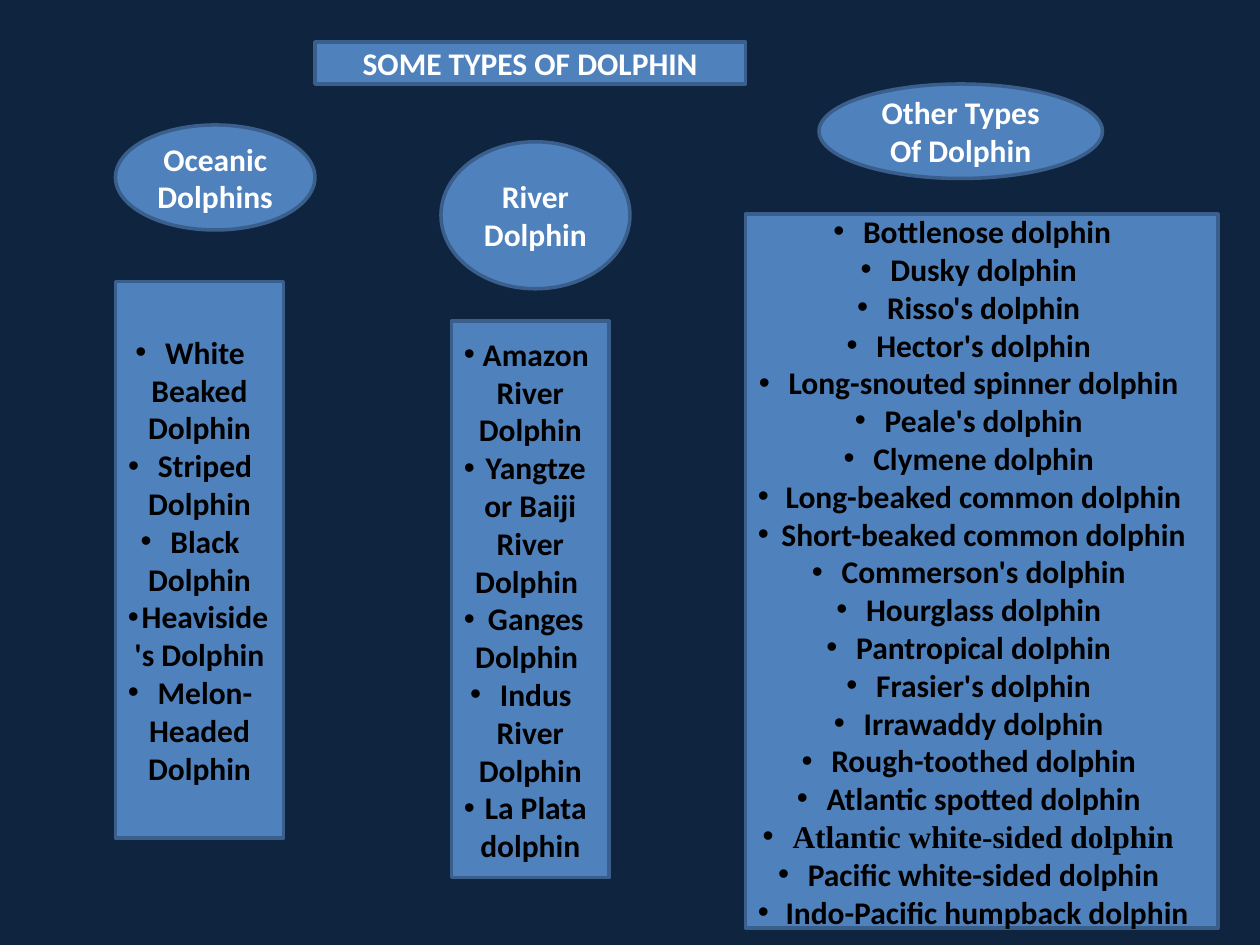
from collections import namedtuple
from dataclasses import dataclass

from lxml.etree import SubElement
from pptx import Presentation
from pptx.dml.color import RGBColor as RGB
from pptx.enum.shapes import MSO_SHAPE as Preset
from pptx.enum.text import MSO_ANCHOR as Anchor, PP_ALIGN as Align
from pptx.oxml.ns import qn
from pptx.util import Inches, Pt


@dataclass(frozen=True)
class Theme:
    night: RGB = RGB(0x0F, 0x24, 0x3E)
    panel: RGB = RGB(0x4F, 0x81, 0xBD)
    border: RGB = RGB(0x3A, 0x5F, 0x8C)
    heading: RGB = RGB(0xFF, 0xFF, 0xFF)
    species: RGB = RGB(0, 0, 0)
    font: str = "Calibri"
    serif: str = "Times New Roman"
    size: int = 18
    border_width: int = 2


THEME = Theme()
CELL = 1 / 12  # grid of 120 columns by 90 rows on a 10 x 7.5 inch slide
Box = namedtuple("Box", "col row cols rows")

OCEANIC = ["White Beaked Dolphin", "Striped Dolphin", "Black Dolphin",
           "Heaviside's Dolphin", "Melon-Headed Dolphin"]
RIVER = ["Amazon River Dolphin", "Yangtze or Baiji River Dolphin ",
         "Ganges Dolphin ", "Indus River Dolphin", "La Plata dolphin"]
OTHER = ["Bottlenose dolphin", "Dusky dolphin ", "Risso's dolphin ",
         "Hector's dolphin ", "Long-snouted spinner dolphin ",
         "Peale's dolphin ", "Clymene dolphin ",
         "Long-beaked common dolphin ", "Short-beaked common dolphin ",
         "Commerson's dolphin ", "Hourglass dolphin ",
         "Pantropical dolphin ", "Frasier's dolphin ", "Irrawaddy dolphin ",
         "Rough-toothed dolphin ", "Atlantic spotted dolphin ",
         "Atlantic white-sided dolphin ", "Pacific white-sided dolphin ",
         "Indo-Pacific humpback dolphin"]
SERIF_SPECIES = {"Atlantic white-sided dolphin "}


def write(paragraph, text, color=THEME.heading, font=THEME.font, bullet=False):
    """Write one bold, centred paragraph."""
    paragraph.alignment = Align.CENTER
    run = paragraph.add_run()
    run.text = text
    run.font.name, run.font.size, run.font.bold = font, Pt(THEME.size), True
    run.font.color.rgb = color
    if bullet:
        props = paragraph._p.get_or_add_pPr()
        SubElement(props, qn("a:buFont"), typeface="Arial")
        SubElement(props, qn("a:buChar"), char="•")


def add_panel(slide, preset, box):
    """Add a bordered panel and return its text frame."""
    panel = slide.shapes.add_shape(preset, *(Inches(n * CELL) for n in box))
    panel.shadow.inherit = False
    panel.fill.solid()
    panel.fill.fore_color.rgb = THEME.panel
    panel.line.color.rgb = THEME.border
    panel.line.width = Pt(THEME.border_width)
    frame = panel.text_frame
    frame.word_wrap = True
    frame.vertical_anchor = Anchor.MIDDLE
    return frame


def add_title(slide, box, title):
    write(add_panel(slide, Preset.RECTANGLE, box).paragraphs[0], title)


def add_group(slide, box, heading, species, oval, listing):
    """Place an oval heading and a species list, both relative to box."""
    oval_box, list_box = (
        Box(box.col + part.col, box.row + part.row, part.cols, part.rows)
        for part in (oval, listing))
    write(add_panel(slide, Preset.OVAL, oval_box).paragraphs[0], heading)

    frame = add_panel(slide, Preset.RECTANGLE, list_box)
    for index, name in enumerate(species):
        paragraph = frame.add_paragraph() if index else frame.paragraphs[0]
        font = THEME.serif if name in SERIF_SPECIES else THEME.font
        write(paragraph, name, color=THEME.species, font=font, bullet=True)


def main():
    deck = Presentation()
    deck.slide_width, deck.slide_height = Inches(10), Inches(7.5)
    slide = deck.slides.add_slide(deck.slide_layouts[6])
    slide.background.fill.solid()
    slide.background.fill.fore_color.rgb = THEME.night

    add_title(slide, Box(30, 4, 41, 4), "SOME TYPES OF DOLPHIN")

    # Three groups of dolphins, left to right
    add_group(slide, Box(11, 11.9, 19, 67.9), "Oceanic Dolphins", OCEANIC,
              oval=Box(0, 0, 19, 10), listing=Box(0, 14.9, 16, 53))
    add_group(slide, Box(42, 13.5, 18, 70.1), "River Dolphin", RIVER,
              oval=Box(0, 0, 18, 14), listing=Box(1, 17.1, 15, 53))
    add_group(slide, Box(71, 8, 45, 80.4), "Other Types Of Dolphin", OTHER,
              oval=Box(7, 0, 27, 9), listing=Box(0, 12.4, 45, 68))

    deck.save("out.pptx")


if __name__ == "__main__":
    main()
